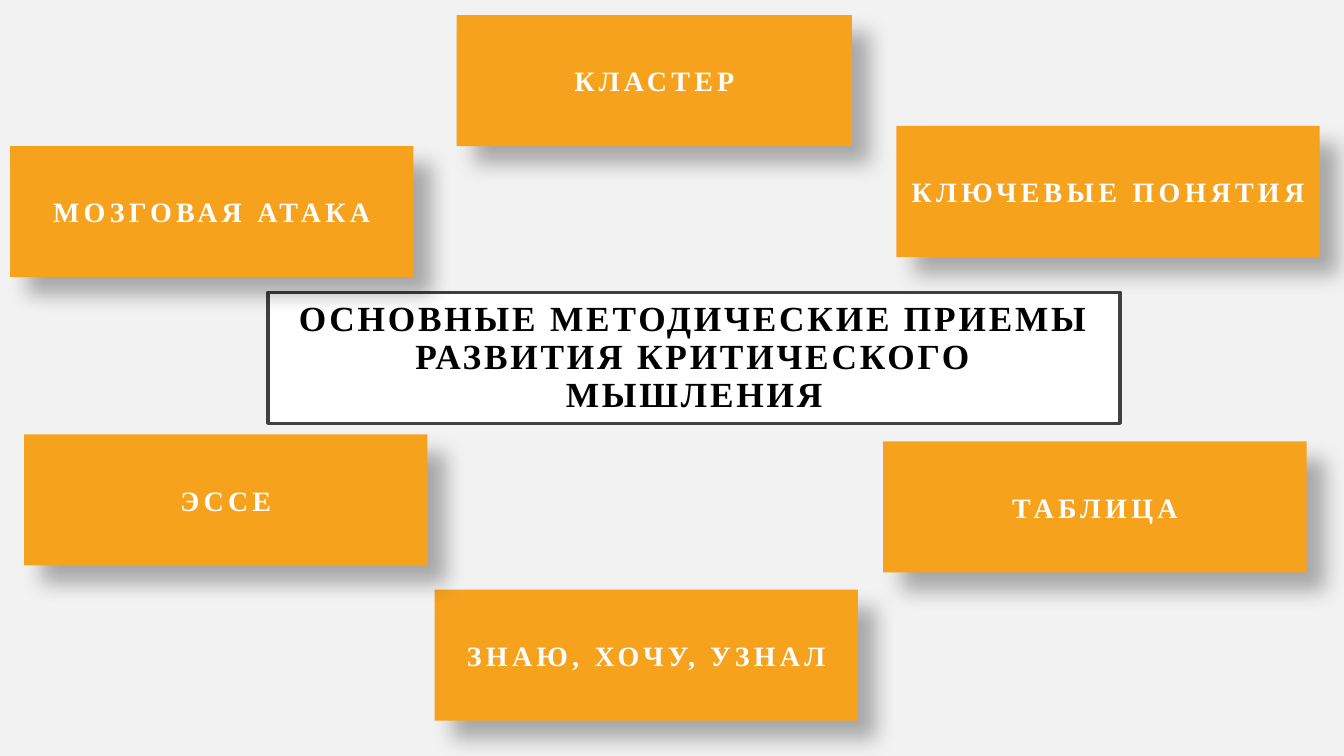
from lxml import etree
from pptx import Presentation
from pptx.dml.color import RGBColor
from pptx.enum.shapes import MSO_SHAPE
from pptx.enum.text import MSO_ANCHOR, PP_ALIGN
from pptx.oxml.ns import qn
from pptx.util import Inches, Pt

RECT = MSO_SHAPE.RECTANGLE
MIDDLE = MSO_ANCHOR.MIDDLE
CENTER = PP_ALIGN.CENTER

FONT = "Times New Roman"
BOX_HEIGHT = 1.3
TITLE = "ОСНОВНЫЕ МЕТОДИЧЕСКИЕ ПРИЕМЫ РАЗВИТИЯ КРИТИЧЕСКОГО МЫШЛЕНИЯ"
# text, left, top, width in inches
METHODS = [
    ("КЛАСТЕР", 4.53, 0.15, 3.92),
    ("КЛЮЧЕВЫЕ ПОНЯТИЯ", 8.89, 1.25, 4.2),
    ("ТАБЛИЦА", 8.76, 4.38, 4.2),
    ("ЗНАЮ, ХОЧУ, УЗНАЛ", 4.31, 5.85, 4.2),
    ("ЭССЕ", 0.24, 4.31, 4),
    ("МОЗГОВАЯ АТАКА", 0.1, 1.45, 4),
]


def color(hex_value):
    return RGBColor.from_string(hex_value)


def add_box(s, text, left, top, width, fill, ink, size, spacing):
    """Add a filled rectangle with bold, centred, letter-spaced text."""
    sp = s.shapes.add_shape(RECT, Inches(left), Inches(top),
                            Inches(width), Inches(BOX_HEIGHT))
    sp.shadow.inherit = False
    sp.fill.solid()
    sp.fill.fore_color.rgb = color(fill)
    sp.line.fill.background()
    tf = sp.text_frame
    tf.word_wrap = True
    tf.vertical_anchor = MIDDLE
    p = tf.paragraphs[0]
    p.alignment = CENTER
    r = p.add_run()
    r.text = text
    r.font._element.set("spc", str(spacing * 100))
    p.font.name = FONT
    p.font.size = Pt(size)
    p.font.bold = True
    p.font.color.rgb = color(ink)
    return sp


def add_title(s):
    sp = add_box(s, TITLE, 2.66, 2.9, 8.45, "FFFFFF", "000000", 25.2, 2)
    sp.line.color.rgb = color("404040")
    sp.line.width = Pt(2.5)
    tf = sp.text_frame
    tf.margin_left = tf.margin_right = Inches(0.2)
    tf.margin_top = tf.margin_bottom = Inches(0.2)
    tf.paragraphs[0].line_spacing = 0.9


def add_shadow(sp):
    """Cast a soft black shadow down and to the right."""
    effects = sp._element.spPr.find(qn("a:effectLst"))
    shadow = etree.SubElement(
        effects, qn("a:outerShdw"), blurRad=str(Pt(15)), dist=str(Pt(18)),
        dir=str(45 * 60000), algn="tl", rotWithShape="0")
    black = etree.SubElement(shadow, qn("a:srgbClr"), val="000000")
    etree.SubElement(black, qn("a:alpha"), val="30000")


def main():
    prs = Presentation()
    prs.slide_width, prs.slide_height = Inches(13.33), Inches(7.5)
    s = prs.slides.add_slide(prs.slide_layouts[6])
    s.background.fill.solid()
    s.background.fill.fore_color.rgb = color("F2F2F2")
    add_title(s)
    for text, left, top, width in METHODS:
        add_shadow(add_box(s, text, left, top, width,
                           "F6A21D", "FFFFFF", 20, 3))
    prs.save("out.pptx")


if __name__ == "__main__":
    main()
